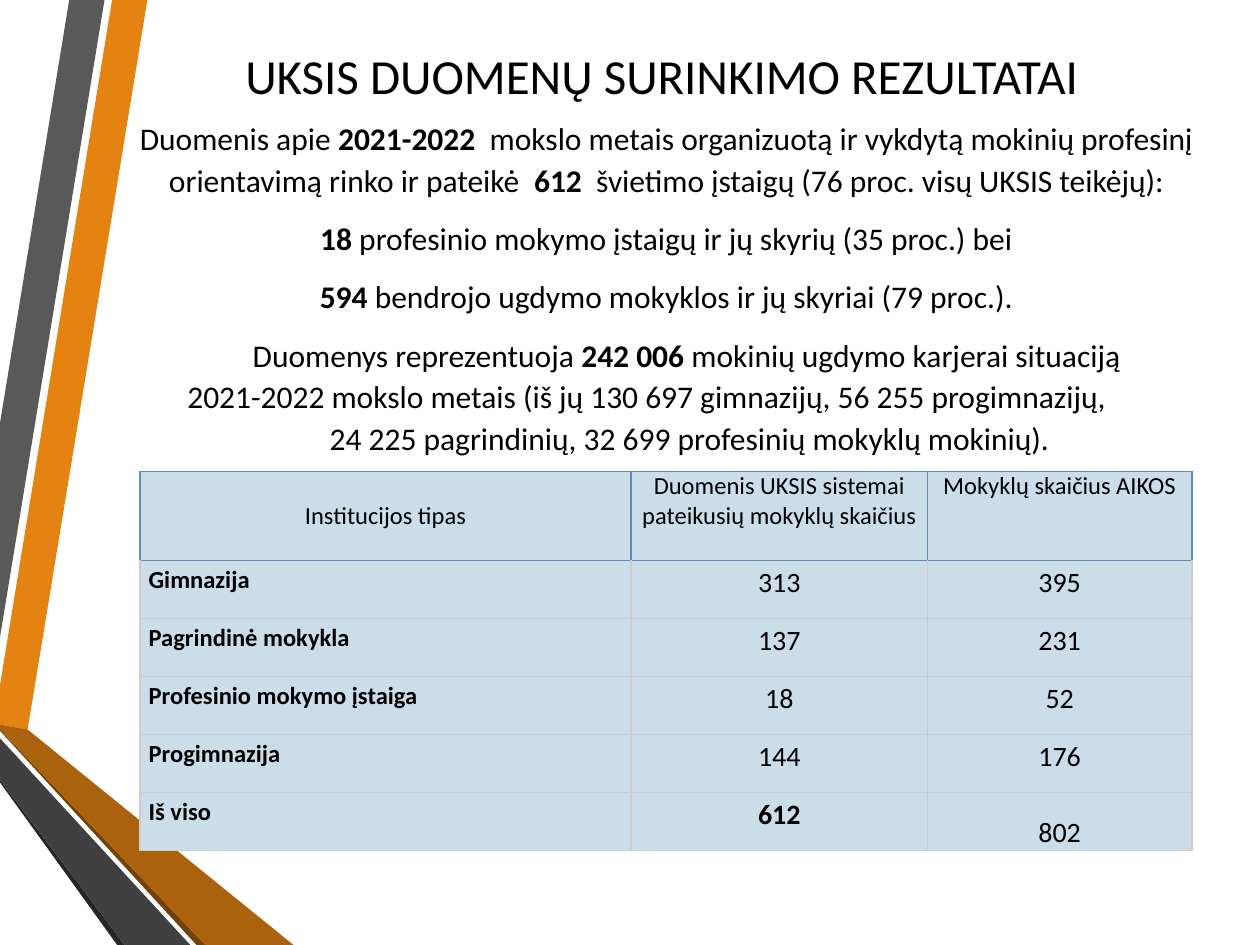
from dataclasses import dataclass

from lxml.etree import SubElement
from pptx import Presentation
from pptx.dml.color import RGBColor
from pptx.enum.text import MSO_ANCHOR, PP_ALIGN
from pptx.oxml.ns import qn
from pptx.util import Emu, Pt

SCALE = 9144


@dataclass(frozen=True)
class Theme:
    font: str = "Calibri"
    ink: str = "000000"
    cell: str = "CCDDEA"
    blue: str = "608BB4"
    grey: str = "CCCCCC"
    title: int = 28
    body: int = 18
    count: int = 16
    label: int = 14


@dataclass(frozen=True)
class Band:
    fill: str
    points: tuple[tuple[int, int], ...]


@dataclass(frozen=True)
class Run:
    text: str
    bold: bool = False


@dataclass(frozen=True)
class Para:
    runs: tuple[Run, ...]
    left: int = 0
    right: int = 0
    first: bool = True
    last: bool = True


@dataclass(frozen=True)
class Style:
    size: int
    bold: bool = False
    align: PP_ALIGN = PP_ALIGN.CENTER
    space: float = 1.0
    anchor: MSO_ANCHOR = MSO_ANCHOR.TOP


THEME = Theme()

BANDS = (
    Band("E48312", ((0, 544), (0, 575), (22, 579), (117, 0), (89, 0))),
    Band("595959", ((83, 0), (55, 0), (0, 336), (0, 506))),
    Band("262626", ((0, 619), (0, 621), (93, 750), (99, 750))),
    Band("724209", ((0, 579), (0, 580), (156, 750), (163, 750))),
    Band("AB620D", ((0, 579), (163, 750), (233, 750), (22, 579), (0, 575))),
    Band("404040", ((0, 619), (99, 750), (151, 750), (0, 586))),
)

TITLE = (Para((Run("UKSIS DUOMENŲ SURINKIMO REZULTATAI"),)),)

BODY = (
    Para((
        Run("Duomenis apie "), Run("2021-2022", True),
        Run("  mokslo metais organizuotą ir vykdytą mokinių profesinį "
            "orientavimą rinko ir pateikė  "),
        Run("612 ", True),
        Run(" švietimo įstaigų (76 proc. visų UKSIS teikėjų):"),
    )),
    Para((Run("18", True),
          Run(" profesinio mokymo įstaigų ir jų skyrių (35 proc.) bei"))),
    Para((Run("594", True),
          Run(" bendrojo ugdymo mokyklos ir jų skyriai (79 proc.)."))),
    Para((Run("Duomenys reprezentuoja "), Run("242 006 ", True),
          Run("mokinių ugdymo karjerai situaciją")), left=32, last=False),
    Para((Run("2021-2022 mokslo metais (iš jų 130 697 gimnazijų, "
              "56 255 progimnazijų,"),), right=31, first=False, last=False),
    Para((Run("24 225 pagrindinių, 32 699 profesinių mokyklų mokinių)."),),
         left=37, first=False),
)

HEAD = ("Institucijos tipas",
        "Duomenis UKSIS sistemai pateikusių mokyklų skaičius",
        "Mokyklų skaičius AIKOS")
ROWS = (
    ("Gimnazija", 313, 395),
    ("Pagrindinė mokykla", 137, 231),
    ("Profesinio mokymo įstaiga", 18, 52),
    ("Progimnazija", 144, 176),
    ("Iš viso", 612, 802),
)
COLS = (390, 235, 210)
HEAD_H, ROW_H = 71, 46


def px(num: int) -> Emu:
    return Emu(num * SCALE)


def add_run(para, run: Run, size: int) -> None:
    part = para.add_run()
    part.text = run.text
    font = part.font
    font.name, font.size, font.bold = THEME.font, Pt(size), run.bold
    font.color.rgb = RGBColor.from_string(THEME.ink)


def draw_band(slide, band: Band) -> None:
    start, *rest = band.points
    pen = slide.shapes.build_freeform(*start, scale=SCALE)
    pen.add_line_segments(rest, close=True)
    shape = pen.convert_to_shape()
    shape.shadow.inherit = False
    shape.fill.solid()
    shape.fill.fore_color.rgb = RGBColor.from_string(band.fill)
    shape.line.fill.background()


def draw_text(slide, box: tuple[int, ...], paras: tuple[Para, ...],
              size: int, foot: int = 5) -> None:
    frame = slide.shapes.add_textbox(*map(px, box)).text_frame
    frame.word_wrap = True
    frame.vertical_anchor = MSO_ANCHOR.MIDDLE
    frame.margin_bottom = px(foot)
    for rank, item in enumerate(paras):
        para = frame.add_paragraph() if rank else frame.paragraphs[0]
        para.alignment = PP_ALIGN.CENTER
        para.line_spacing = 1.1
        para.space_before = Pt(size * 0.2 if item.first else 0)
        para.space_after = Pt(6 if item.last else 0)
        props = para._p.get_or_add_pPr()
        props.set("marL", str(px(item.left)))
        props.set("marR", str(px(item.right)))
        for run in item.runs:
            add_run(para, run, size)


def set_edge(cell, side: str, tint: str) -> None:
    line = SubElement(cell._tc.get_or_add_tcPr(), qn(f"a:ln{side}"), w=str(Pt(1)))
    fill = SubElement(line, qn("a:solidFill"))
    SubElement(fill, qn("a:srgbClr"), val=tint)


def fill_cell(cell, text: str, style: Style, top: str, rest: str) -> None:
    for side in "LRTB":
        set_edge(cell, side, top if side == "T" else rest)
    cell.fill.solid()
    cell.fill.fore_color.rgb = RGBColor.from_string(THEME.cell)
    cell.margin_left = cell.margin_right = px(7)
    cell.margin_top = cell.margin_bottom = px(0)
    cell.vertical_anchor = style.anchor
    para = cell.text_frame.paragraphs[0]
    para.alignment, para.line_spacing = style.align, style.space
    add_run(para, Run(text, style.bold), style.size)


def pick_style(row: int, col: int) -> Style:
    if row == 0:
        anchor = MSO_ANCHOR.TOP if col else MSO_ANCHOR.MIDDLE
        return Style(THEME.label, anchor=anchor)
    if col == 0:
        return Style(THEME.label, True, PP_ALIGN.JUSTIFY, 1.15)
    last = row == len(ROWS)
    if last and col == 2:
        return Style(THEME.count, anchor=MSO_ANCHOR.BOTTOM)
    return Style(THEME.count, last, space=1.15)


def draw_table(slide, left: int, top: int) -> None:
    data = (HEAD, *ROWS)
    high = HEAD_H + ROW_H * len(ROWS)
    box = map(px, (left, top, sum(COLS), high))
    table = slide.shapes.add_table(len(data), len(COLS), *box).table
    table.first_row = table.horz_banding = False
    for col, width in enumerate(COLS):
        table.columns[col].width = px(width)
    for row, texts in enumerate(data):
        table.rows[row].height = px(ROW_H if row else HEAD_H)
        upper = THEME.blue if row < 2 else THEME.grey
        rest = THEME.grey if row else THEME.blue
        for col, text in enumerate(texts):
            fill_cell(table.cell(row, col), str(text), pick_style(row, col),
                      upper, rest)


def main() -> None:
    deck = Presentation()
    deck.slide_width, deck.slide_height = px(1000), px(750)
    slide = deck.slides.add_slide(deck.slide_layouts[6])
    for band in BANDS:
        draw_band(slide, band)
    draw_text(slide, (93, 115, 872, 334), BODY, THEME.body, foot=115)
    draw_table(slide, 111, 374)
    draw_text(slide, (89, 10, 872, 94), TITLE, THEME.title)
    deck.save("out.pptx")


if __name__ == "__main__":
    main()
